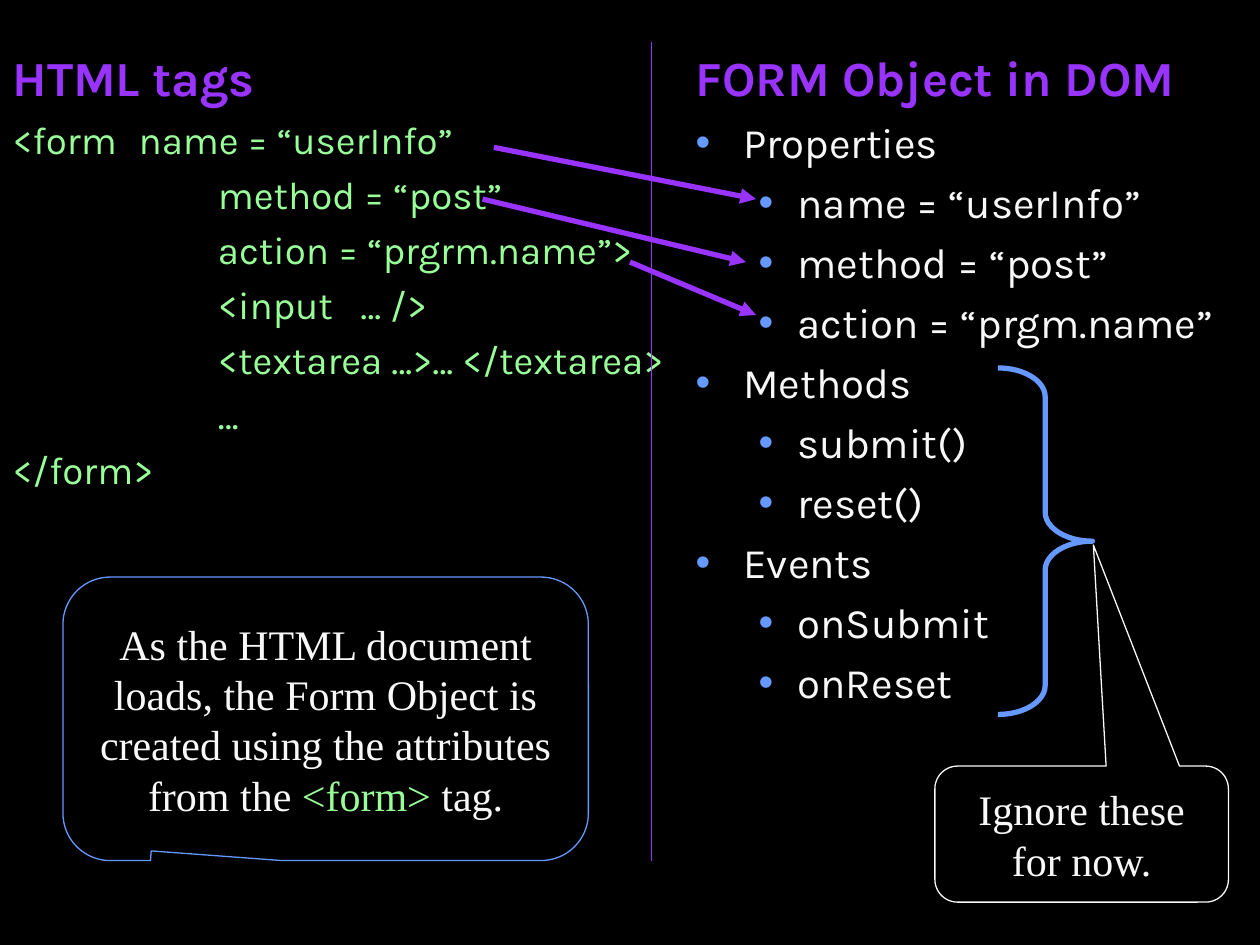
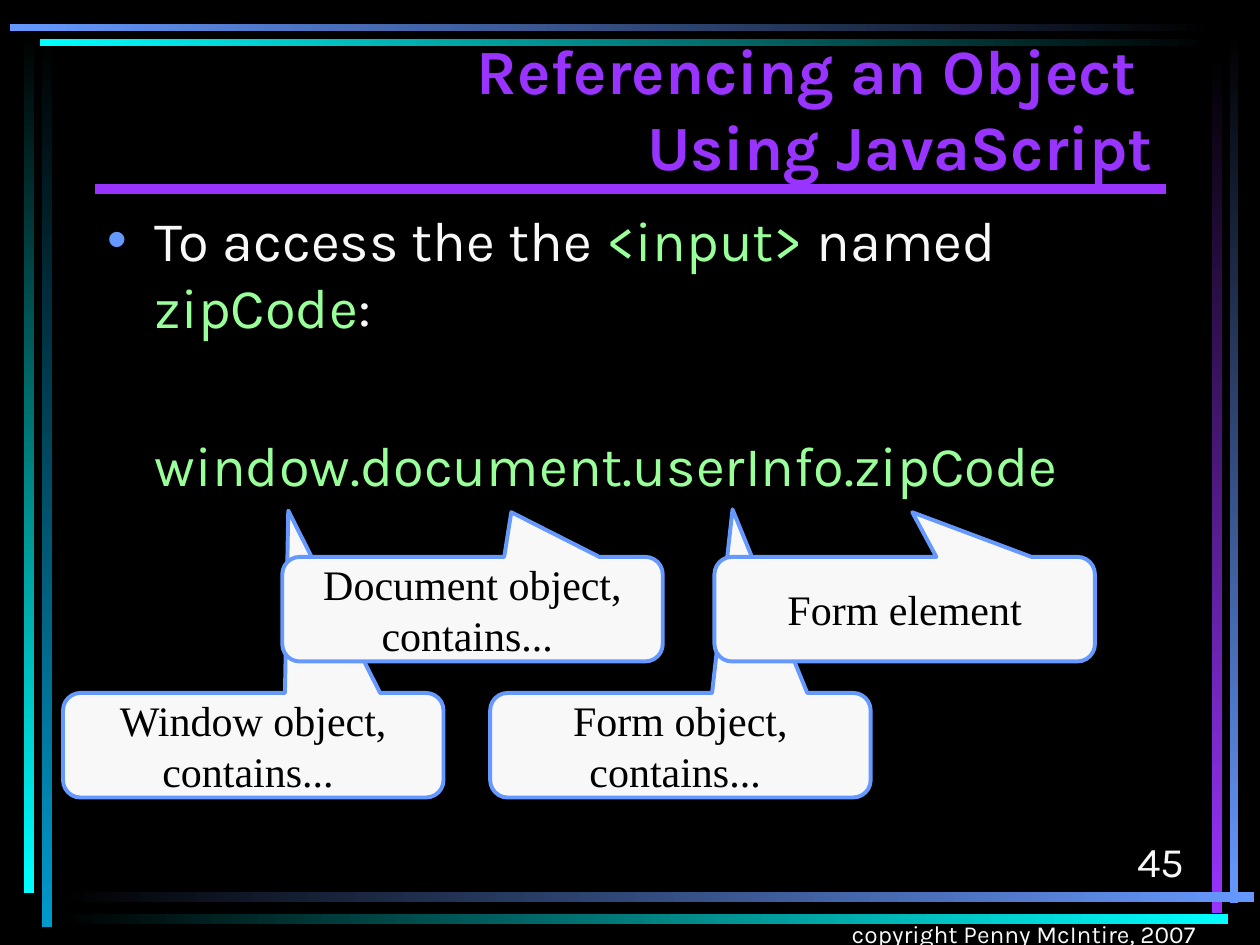
import pptx
import pptx.dml.color
import pptx.enum.shapes
import pptx.enum.text
import pptx.oxml.ns
import pptx.util
from lxml import etree

Inches = pptx.util.Inches
Pt = pptx.util.Pt
RGBColor = pptx.dml.color.RGBColor
MSO_SHAPE = pptx.enum.shapes.MSO_SHAPE
PP_ALIGN = pptx.enum.text.PP_ALIGN
MSO_ANCHOR = pptx.enum.text.MSO_ANCHOR
qn = pptx.oxml.ns.qn

BLACK = RGBColor(0x00, 0x00, 0x00)
WHITE = RGBColor(0xF8, 0xF8, 0xF8)
PURPLE = RGBColor(0x99, 0x33, 0xFF)
GREEN = RGBColor(0x99, 0xFF, 0x99)
BLUE = RGBColor(0x66, 0x99, 0xFF)
CYAN = RGBColor(0x00, 0xFF, 0xFF)
TEAL = RGBColor(0x00, 0x99, 0xCC)

SANS = "Karla"
SERIF = "Times New Roman"
SPACE_BEFORE = 0.23
BRIGHT_DOWN, BRIGHT_RIGHT, BRIGHT_LEFT = 270, 0, 180


def place(sp, left, top, width, height):
    sp.left, sp.top = Inches(left), Inches(top)
    sp.width, sp.height = Inches(width), Inches(height)


def add_runs(p, runs, size, font=SANS, bold=False):
    for text, color in runs:
        r = p.add_run()
        r.text = text
        r.font.name = font
        r.font.size = Pt(size)
        r.font.bold = bold
        r.font.color.rgb = color


def add_paragraph(tf, runs, size, margin=0.38, indent=0, bullet=False,
                  level=0, bold=False, before=None, tab=None):
    p = tf.paragraphs[0]
    if p.runs:
        p = tf.add_paragraph()
    p.level = level
    p.alignment = PP_ALIGN.LEFT
    p.space_before = Pt(round(size * SPACE_BEFORE, 1) if before is None else before)
    pPr = p._p.get_or_add_pPr()
    pPr.set("marL", str(Inches(margin)))
    pPr.set("indent", str(Inches(indent)))
    if bullet:
        clr = etree.SubElement(pPr, qn("a:buClr"))
        etree.SubElement(clr, qn("a:srgbClr"), val=str(BLUE))
        etree.SubElement(pPr, qn("a:buFont"), typeface="Arial")
        etree.SubElement(pPr, qn("a:buChar"), char="•")
    else:
        etree.SubElement(pPr, qn("a:buNone"))
    if tab:
        tabs = etree.SubElement(pPr, qn("a:tabLst"))
        etree.SubElement(tabs, qn("a:tab"), pos=str(Inches(tab)), algn="l")
    add_runs(p, runs, size, bold=bold)


def body_frame(sp, box):
    place(sp, *box)
    tf = sp.text_frame
    tf.word_wrap = True
    tf.auto_size = pptx.enum.text.MSO_AUTO_SIZE.NONE
    tf.vertical_anchor = MSO_ANCHOR.TOP
    return tf


def add_line(s, start, end, width, arrow=False):
    cx = s.shapes.add_connector(pptx.enum.shapes.MSO_CONNECTOR.STRAIGHT,
                                *map(Inches, start + end))
    cx.line.color.rgb = PURPLE
    cx.line.width = Pt(width)
    if arrow:
        etree.SubElement(cx.line._get_or_add_ln(), qn("a:tailEnd"), type="triangle")
    etree.SubElement(cx._element.spPr, qn("a:effectLst"))


def add_outlined(s, kind, box, adjustments, color, width, fill=None):
    sp = s.shapes.add_shape(kind, *map(Inches, box))
    sp.shadow.inherit = False
    for i, value in enumerate(adjustments):
        sp.adjustments[i] = value
    if fill is None:
        sp.fill.background()
    else:
        sp.fill.solid()
        sp.fill.fore_color.rgb = fill
    sp.line.color.rgb = color
    sp.line.width = Pt(width)
    return sp


def add_callout(s, box, tip, runs, color, width, fill=None):
    sp = add_outlined(s, MSO_SHAPE.ROUNDED_RECTANGULAR_CALLOUT, box,
                      (*tip, 0.167), color, width, fill)
    tf = sp.text_frame
    tf.word_wrap = True
    tf.vertical_anchor = MSO_ANCHOR.MIDDLE
    p = tf.paragraphs[0]
    p.alignment = PP_ALIGN.CENTER
    add_runs(p, runs, 24, SERIF)


def html_panel(sp, box):
    tf = body_frame(sp, box)
    add_paragraph(tf, [("HTML tags", PURPLE)], 28, margin=0, bold=True)
    add_paragraph(tf, [("<form\tname = “userInfo”", GREEN)], 22, margin=0, tab=1.01)
    for text in ("method = “post”", "action = “prgrm.name”>", "<input   … />",
                 "<textarea …>… </textarea>", "…"):
        add_paragraph(tf, [(text, GREEN)], 22, margin=1.63)
    add_paragraph(tf, [("</form>", GREEN)], 22, margin=0)


def dom_panel(sp, box):
    tf = body_frame(sp, box)
    add_paragraph(tf, [("FORM Object in DOM", PURPLE)], 28, margin=0, bold=True)
    members = {
        "Properties": ("name = “userInfo”", "method = “post”", "action = “prgm.name”"),
        "Methods": ("submit()", "reset()"),
        "Events": ("onSubmit", "onReset"),
    }
    for group, items in members.items():
        add_paragraph(tf, [(group, WHITE)], 24, indent=-0.38, bullet=True)
        for item in items:
            add_paragraph(tf, [(item, WHITE)], 24, margin=0.81, indent=-0.31,
                          bullet=True, level=1)


def attribute_arrows(s, box):
    x, y = box[:2]
    for x1, y1, x2, y2 in ((0.09, 0, 2.17, 0.41), (0, 0.41, 2.09, 0.91),
                           (1.17, 0.91, 2.17, 1.33)):
        add_line(s, (x + x1, y + y1), (x + x2, y + y2), 3, arrow=True)


def ignored_members(s, box):
    x, y, w, h = box
    add_callout(s, (x, y + h - 1.08, w, 1.08), (0.04, -2.125),
                [("Ignore these for now.", WHITE)], WHITE, 0.75)
    add_outlined(s, MSO_SHAPE.RIGHT_BRACE, (x + 0.5, y, 0.75, 2.75),
                 (0.306, 0.5), BLUE, 3)


def form_object_slide(prs):
    s = prs.slides.add_slide(prs.slide_layouts[3])
    title = s.shapes.title.element
    title.getparent().remove(title)
    html_panel(s.placeholders[1], (0, 0.33, 5.58, 6.75))
    dom_panel(s.placeholders[2], (5.42, 0.33, 5.08, 5.92))
    attribute_arrows(s, (3.83, 1.17, 2.17, 1.33))
    add_line(s, (5.17, 0.33), (5.17, 6.83), 0.75)
    add_callout(s, (0.5, 4.58, 4.17, 2.25), (-0.332, 0.466),
                [("As the HTML document loads, the Form Object is created using "
                  "the attributes from the ", WHITE),
                 ("<form>", GREEN), (" tag.", WHITE)], BLUE, 0.75)
    ignored_members(s, (7.42, 2.92, 2.33, 4.24))


def frame_bands(s):
    bands = (
        ((0.33, 0.28, 0.08, 7.08), TEAL, BRIGHT_DOWN),
        ((0.19, 0.25, 0.08, 6.84), CYAN, BRIGHT_DOWN),
        ((9.76, 0.24, 0.07, 6.93), BLUE, BRIGHT_DOWN),
        ((9.62, 0.42, 0.08, 6.83), PURPLE, BRIGHT_DOWN),
        ((0.45, 7.08, 9.5, 0.08), BLUE, BRIGHT_RIGHT),
        ((0.45, 7.25, 9.3, 0.08), CYAN, BRIGHT_RIGHT),
        ((0.32, 0.31, 9.32, 0.06), CYAN, BRIGHT_LEFT),
        ((0.08, 0.19, 9.56, 0.06), BLUE, BRIGHT_LEFT),
    )
    for box, color, angle in bands:
        sp = s.shapes.add_shape(MSO_SHAPE.RECTANGLE, *map(Inches, box))
        sp.shadow.inherit = False
        sp.line.fill.background()
        sp.fill.gradient()
        sp.fill.gradient_angle = angle
        dark, bright = sp.fill.gradient_stops
        dark.color.rgb, bright.color.rgb = BLACK, color


def slide_title(s, box, lines):
    sp = s.shapes.title
    tf = body_frame(sp, box)
    tf.vertical_anchor = MSO_ANCHOR.BOTTOM
    p = tf.paragraphs[0]
    p.alignment = PP_ALIGN.RIGHT
    for i, line in enumerate(lines):
        if i:
            p.add_line_break()
        add_runs(p, [(line, PURPLE)], 36, bold=True)
    x, y, w, h = box
    add_line(s, (x, y + h), (x + w, y + h), 6)


def footer_text(s, box, text, size):
    tf = body_frame(s.shapes.add_textbox(*map(Inches, box)), box)
    tf.vertical_anchor = MSO_ANCHOR.BOTTOM
    p = tf.paragraphs[0]
    p.alignment = PP_ALIGN.RIGHT
    add_runs(p, [(text, WHITE)], size)


def reference_body(sp, box):
    tf = body_frame(sp, box)
    add_paragraph(tf, [("To access the the ", WHITE), ("<input>", GREEN),
                       (" named ", WHITE), ("zipCode", GREEN), (":", WHITE)],
                  32, indent=-0.38, bullet=True)
    add_paragraph(tf, [("window.document.userInfo.zipCode", GREEN)], 32, before=52)


def object_callouts(s, box):
    x, y, w, h = box
    upper, lower = y, y + 1.08
    for left, top, tip, text in (
            (x, lower, (0.092, -2.244), "Window object, contains... "),
            (x + 1.74, upper, (0.102, -0.927), "Document object, contains... "),
            (x + 3.39, lower, (0.137, -2.256), "Form object, contains... "),
            (x + 5.17, upper, (0.02, -0.927), "Form element")):
        add_callout(s, (left, top, 3.02, 0.83), tip, [(text, BLACK)],
                    BLUE, 2.25, WHITE)


def referencing_slide(prs):
    s = prs.slides.add_slide(prs.slide_layouts[1])
    frame_bands(s)
    slide_title(s, (0.75, 0.42, 8.5, 1.08),
                ("Referencing an Object ", "Using JavaScript"))
    footer_text(s, (7.42, 6.58, 2.08, 0.5), "45", 24)
    footer_text(s, (6.42, 7.08, 3.17, 0.5), "copyright Penny McIntire, 2007", 14)
    reference_body(s.placeholders[1], (0.75, 1.58, 8.5, 5.92))
    object_callouts(s, (0.5, 4.42, 8.19, 1.91))


def main():
    prs = pptx.Presentation()
    prs.slide_width, prs.slide_height = Inches(10), Inches(7.5)
    fill = prs.slide_master.background.fill
    fill.solid()
    fill.fore_color.rgb = BLACK
    form_object_slide(prs)
    referencing_slide(prs)
    prs.save("out.pptx")


if __name__ == "__main__":
    main()
